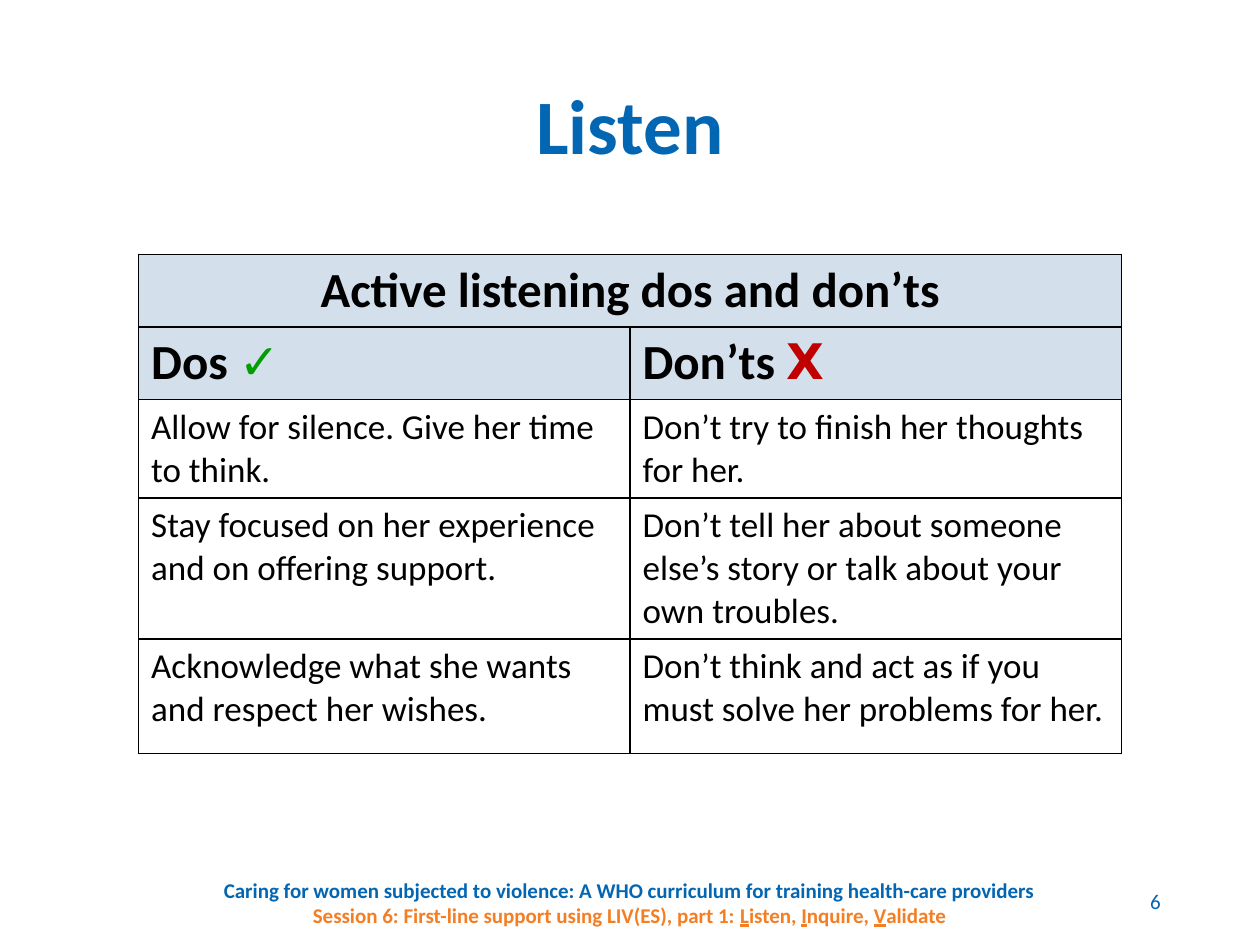
from pptx import Presentation
from pptx.dml.color import RGBColor
from pptx.enum.text import MSO_ANCHOR, PP_ALIGN
from pptx.oxml import parse_xml
from pptx.oxml.ns import nsdecls
from pptx.util import Pt

FONT = "Calibri"
BLUE, ORANGE, BLACK = "0366B3", "F57D22", "000000"
GREEN, RED, PALE = "009F00", "C00000", "D3DFEA"

HEADS = [[("Dos ", BLACK), ("✓", GREEN)], [("Don’ts ", BLACK), ("𝗫", RED)]]
ADVICE = [
    ("Allow for silence. Give her time to think.",
     "Don’t try to finish her thoughts for her."),
    ("Stay focused on her experience and on offering support.",
     "Don’t tell her about someone else’s story or talk about your own troubles."),
    ("Acknowledge what she wants and respect her wishes.",
     "Don’t think and act as if you must solve her problems for her."),
]
ROWS = [39.6, 39.6, 54, 77, 65.5]


def color(value):
    return RGBColor.from_string(value)


def add_run(para, text, size, tint, bold=False, under=None):
    run = para.add_run()
    run.text = text
    font = run.font
    font.name, font.size, font.bold = FONT, Pt(size), bold
    font.underline = under
    font.color.rgb = color(tint)


def add_box(slide, left, top, width, height, align):
    box = slide.shapes.add_textbox(Pt(left), Pt(top), Pt(width), Pt(height))
    frame = box.text_frame
    frame.word_wrap = True
    frame.vertical_anchor = MSO_ANCHOR.MIDDLE
    para = frame.paragraphs[0]
    para.alignment = align
    return para


def style_cell(cell, fill=None):
    props = cell._tc.get_or_add_tcPr()
    for side in "LRTB":
        props.append(parse_xml(
            f'<a:ln{side} {nsdecls("a")} w="{Pt(1)}"><a:solidFill>'
            f'<a:srgbClr val="{BLACK}"/></a:solidFill></a:ln{side}>'))
    if fill:
        cell.fill.solid()
        cell.fill.fore_color.rgb = color(fill)
    else:
        cell.fill.background()


def add_title(slide):
    title = slide.shapes.title
    title.left, title.top = Pt(49.5), Pt(21.6)
    title.width, title.height = Pt(621), Pt(104.4)
    frame = title.text_frame
    frame.vertical_anchor = MSO_ANCHOR.MIDDLE
    para = frame.paragraphs[0]
    para.alignment = PP_ALIGN.CENTER
    para.line_spacing = 0.9
    add_run(para, "Listen", 44, BLUE, True)


def add_grid(slide):
    table = slide.shapes.add_table(
        len(ROWS), 2, Pt(79.2), Pt(145.4), Pt(561.6), Pt(sum(ROWS))).table
    for row, height in zip(table.rows, ROWS):
        row.height = Pt(height)
    for r in range(len(ROWS)):
        for c in range(2):
            style_cell(table.cell(r, c), PALE if r < 2 else None)

    # Banner across both columns
    table.cell(0, 0).merge(table.cell(0, 1))
    para = table.cell(0, 0).text_frame.paragraphs[0]
    para.alignment = PP_ALIGN.CENTER
    add_run(para, "Active listening dos and don’ts", 28, BLACK, True)

    # Column heads, then advice
    for c, parts in enumerate(HEADS):
        for text, tint in parts:
            add_run(table.cell(1, c).text_frame.paragraphs[0],
                    text, 28, tint, True)
    for r, pair in enumerate(ADVICE, 2):
        for c, text in enumerate(pair):
            add_run(table.cell(r, c).text_frame.paragraphs[0],
                    text, 20, BLACK)


def add_footer(slide):
    para = add_box(slide, 116, 494, 487.4, 43.2, PP_ALIGN.CENTER)
    add_run(para, "Caring for women subjected to violence: "
            "A WHO curriculum for training health-care providers",
            12, BLUE, True)
    para.add_line_break()
    add_run(para, "Session 6: First-line support using LIV(ES), part 1: ",
            12, ORANGE, True)
    for first, rest in (("L", "isten, "), ("I", "nquire, "), ("V", "alidate")):
        add_run(para, first, 12, ORANGE, True, True)
        add_run(para, rest, 12, ORANGE, True)

    # Page number
    para = add_box(slide, 631.5, 500.4, 38.9, 28.8, PP_ALIGN.RIGHT)
    add_run(para, "6", 12, BLUE)


def main():
    deck = Presentation()
    deck.slide_width, deck.slide_height = Pt(720), Pt(540)
    slide = deck.slides.add_slide(deck.slide_layouts[5])
    add_title(slide)
    add_grid(slide)
    add_footer(slide)
    deck.save("out.pptx")


if __name__ == "__main__":
    main()
